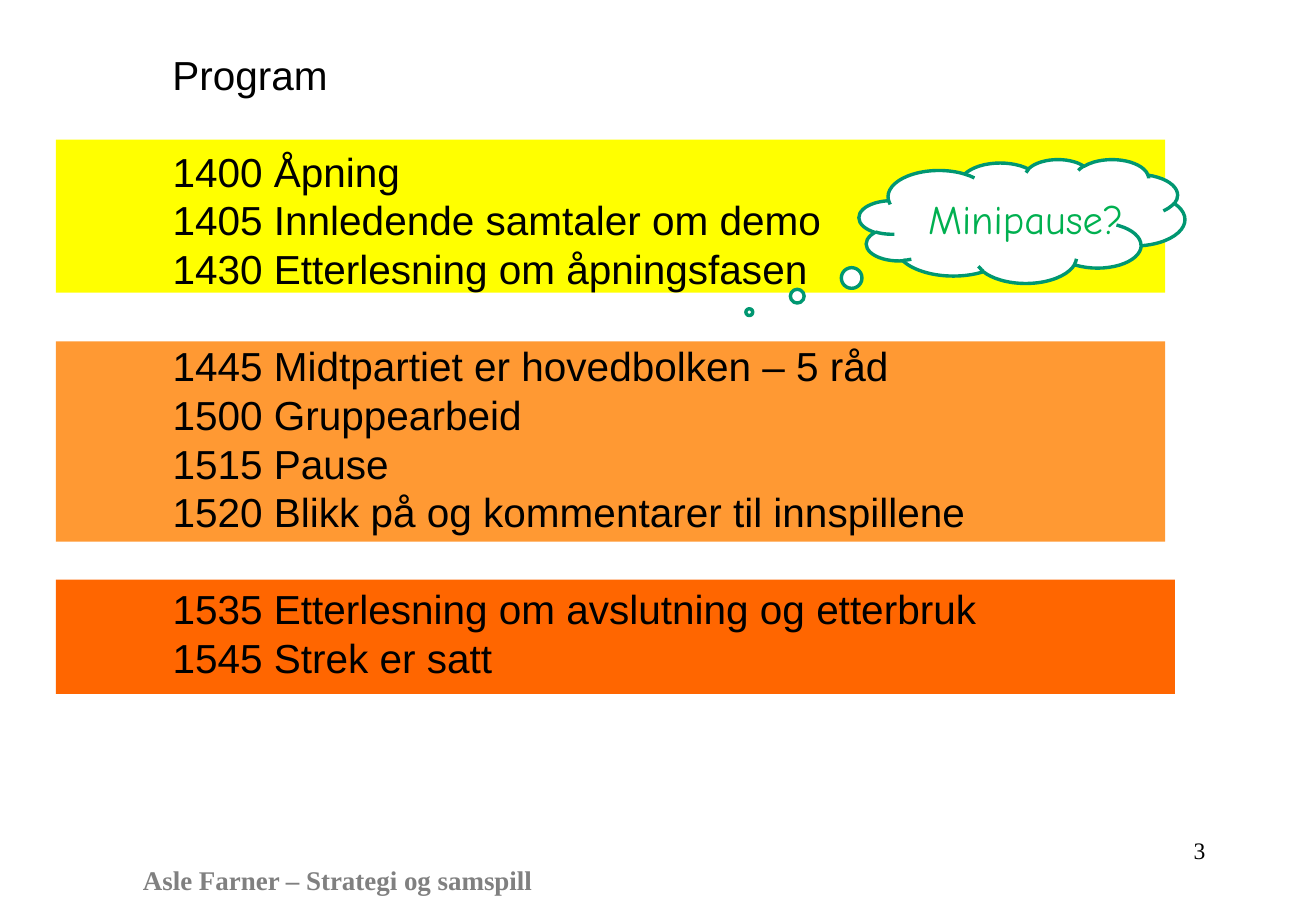
from dataclasses import dataclass

from pptx import Presentation
from pptx.dml.color import RGBColor
from pptx.enum.shapes import MSO_SHAPE
from pptx.enum.text import MSO_ANCHOR, MSO_AUTO_SIZE, PP_ALIGN
from pptx.util import Cm, Pt


@dataclass(frozen=True)
class Theme:
    black: RGBColor = RGBColor.from_string("000000")
    white: RGBColor = RGBColor.from_string("FFFFFF")
    grey: RGBColor = RGBColor.from_string("808080")
    yellow: RGBColor = RGBColor.from_string("FFFF00")
    light_orange: RGBColor = RGBColor.from_string("FF9933")
    dark_orange: RGBColor = RGBColor.from_string("FF6600")
    cloud_line: RGBColor = RGBColor.from_string("009771")
    cloud_text: RGBColor = RGBColor.from_string("00B050")
    body_font: str = "Arial"
    cloud_font: str = "Comic Neue"
    footer_font: str = "Times New Roman"
    body_size: Pt = Pt(24)
    body_spacing: Pt = Pt(28.8)
    footer_size: Pt = Pt(16)
    number_size: Pt = Pt(14)


theme = Theme()


def write_lines(shape, lines, font, size, color, align=PP_ALIGN.LEFT, spacing=None, bold=False):
    frame = shape.text_frame
    frame.text = "\n".join(lines)
    frame.word_wrap = True
    frame.auto_size = MSO_AUTO_SIZE.NONE
    frame.vertical_anchor = MSO_ANCHOR.TOP
    for para in frame.paragraphs:
        para.alignment = align
        para.line_spacing = spacing
        para.font.name = font
        para.font.size = size
        para.font.bold = bold
        para.font.color.rgb = color


deck = Presentation()
deck.slide_width, deck.slide_height = Cm(27.51), Cm(19.05)
page = deck.slides.add_slide(deck.slide_layouts[5])

title = page.shapes.title
title.left, title.top, title.width, title.height = Cm(3.35), Cm(0.91), Cm(19), Cm(1.3)
write_lines(title, ["Program"], theme.body_font, theme.body_size, theme.black,
            spacing=theme.body_spacing)

sessions = [
    (theme.yellow, 2.92, 23.19, 3.2, 0.15, [
        "1400 Åpning",
        "1405 Innledende samtaler om demo",
        "1430 Etterlesning om åpningsfasen",
    ]),
    (theme.light_orange, 7.14, 23.19, 4.19, 0, [
        "1445 Midtpartiet er hovedbolken – 5 råd",
        "1500 Gruppearbeid",
        "1515 Pause",
        "1520 Blikk på og kommentarer til innspillene",
    ]),
    (theme.dark_orange, 12.12, 23.39, 2.39, 0.1, [
        "1535 Etterlesning om avslutning og etterbruk",
        "1545 Strek er satt",
    ]),
]
for color, top, width, height, margin_top, lines in sessions:
    band = page.shapes.add_shape(MSO_SHAPE.RECTANGLE, Cm(1.17), Cm(top), Cm(width), Cm(height))
    band.shadow.inherit = False
    band.fill.solid()
    band.fill.fore_color.rgb = color
    band.line.fill.background()
    write_lines(band, lines, theme.body_font, theme.body_size, theme.black,
                spacing=theme.body_spacing)
    band.text_frame.margin_left = Cm(2.44)
    band.text_frame.margin_top = Cm(margin_top)
    band.text_frame.margin_bottom = Cm(0)

footer = page.shapes.add_textbox(Cm(2.74), Cm(17.93), Cm(9.86), Cm(0.84))
write_lines(footer, ["Asle Farner – Strategi og samspill"], theme.footer_font,
            theme.footer_size, theme.grey, bold=True)

page_number = page.shapes.add_textbox(Cm(19.71), Cm(17.35), Cm(5.74), Cm(1.27))
write_lines(page_number, ["3"], theme.footer_font, theme.number_size, theme.black,
            align=PP_ALIGN.RIGHT)

cloud = page.shapes.add_shape(MSO_SHAPE.CLOUD_CALLOUT, Cm(17.96), Cm(3.33), Cm(6.81), Cm(2.59))
cloud.adjustments[0] = -0.837
cloud.adjustments[1] = 0.735
cloud.shadow.inherit = False
cloud.fill.solid()
cloud.fill.fore_color.rgb = theme.white
cloud.line.color.rgb = theme.cloud_line
cloud.line.width = Pt(2)
write_lines(cloud, ["Minipause?"], theme.cloud_font, theme.body_size, theme.cloud_text,
            align=PP_ALIGN.CENTER)
cloud.text_frame.word_wrap = False
cloud.text_frame.vertical_anchor = MSO_ANCHOR.MIDDLE
cloud.text_frame.margin_left = Cm(0.64)
cloud.text_frame.margin_right = Cm(0)

deck.save("out.pptx")
